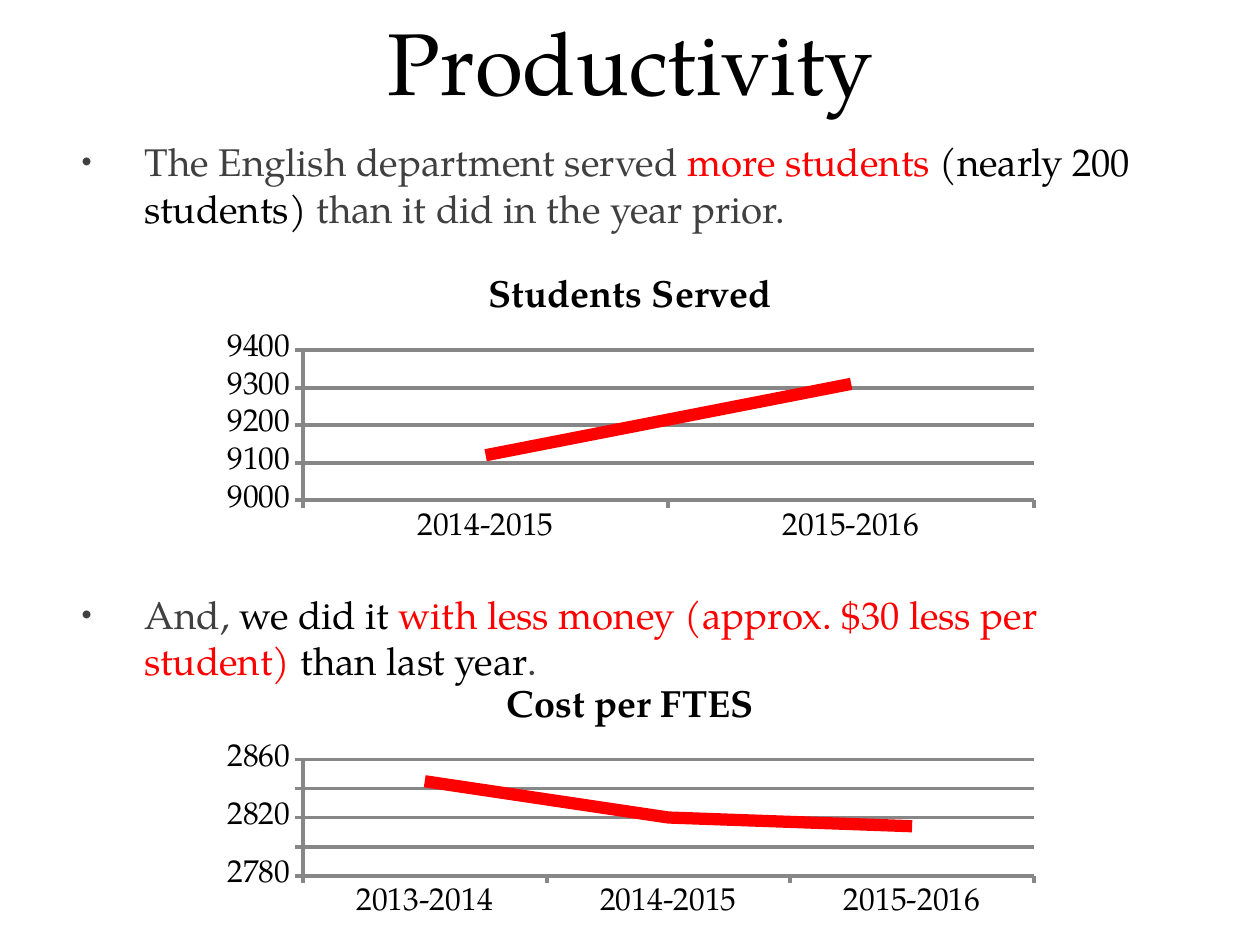
from lxml import etree
from pptx import Presentation
from pptx.chart.data import CategoryChartData
from pptx.dml.color import RGBColor
from pptx.enum.chart import XL_CHART_TYPE, XL_MARKER_STYLE, XL_TICK_MARK
from pptx.enum.text import MSO_ANCHOR, PP_ALIGN
from pptx.oxml import parse_xml
from pptx.oxml.ns import nsdecls, qn
from pptx.util import Inches, Pt

LINE, LINE_STACKED = XL_CHART_TYPE.LINE, XL_CHART_TYPE.LINE_STACKED
NO_MARKER, CROSS = XL_MARKER_STYLE.NONE, XL_TICK_MARK.CROSS
OUTSIDE = XL_TICK_MARK.OUTSIDE
FONT = "TeX Gyre Pagella"
BLACK, GREY, RED, RULE = "000000", "404040", "FF0000", "878787"

# Content
TITLE = "Productivity"
BULLETS = [  # (space before in points, runs)
    (0, [("The English department served ", GREY), ("more students ", RED),
         ("(nearly 200 students) ", BLACK),
         ("than it did in the year prior.", GREY)]),
    (206, [("And, ", GREY), ("we did it ", BLACK),
           ("with less money (approx. $30 less per student) ", RED),
           ("than last year", BLACK), (".", GREY)]),
]
CHARTS = [
    dict(name="Students Served", kind=LINE_STACKED, top=2.03, height=2.34,
         cats=["2014-2015", "2015-2016"], vals=[9120, 9310],
         scale=(9000, 9400, 100), plot=(0.11, 0.32, 0.87, 0.51)),
    dict(name="Cost per FTES", kind=LINE, top=5.29, height=2.05,
         cats=["2013-2014", "2014-2015", "2015-2016"], vals=[2845, 2820, 2814],
         scale=(2780, 2860, 20), plot=(0.11, 0.36, 0.87, 0.45)),
]


def rgb(color):
    return RGBColor.from_string(color)


def style(font, size, color, bold=False):
    font.name, font.size, font.bold = FONT, Pt(size), bold
    font.color.rgb = rgb(color)


def add_run(p, text, size, color, bold=False):
    r = p.add_run()
    r.text = text
    style(r.font, size, color, bold)


def add_box(s, top, height, anchor):
    tf = s.shapes.add_textbox(Inches(0.55), Inches(top), Inches(8.91),
                              Inches(height)).text_frame
    tf.word_wrap, tf.vertical_anchor = True, anchor
    return tf


def add_bullet(p):
    pPr = p._p.get_or_add_pPr()
    pPr.set("marL", str(Inches(0.5)))
    pPr.set("indent", str(Inches(-0.5)))
    color = etree.SubElement(pPr, qn("a:buClr"))
    etree.SubElement(color, qn("a:srgbClr"), val=GREY)
    etree.SubElement(pPr, qn("a:buSzPct"), val="75000")
    etree.SubElement(pPr, qn("a:buFont"), typeface="Arial")
    etree.SubElement(pPr, qn("a:buChar"), char="•")


def set_plot_area(chart, plot):
    area = chart._chartSpace.chart.plotArea
    for old in area.findall(qn("c:layout")):
        area.remove(old)
    parts = "".join(f'<c:{tag} val="{v}"/>' for tag, v in zip("xywh", plot))
    area.insert(0, parse_xml(
        f'<c:layout {nsdecls("c")}><c:manualLayout><c:layoutTarget val="inner"/>'
        f'<c:xMode val="edge"/><c:yMode val="edge"/>{parts}'
        '</c:manualLayout></c:layout>'))


def rule(line):
    line.color.rgb, line.width = rgb(RULE), Pt(2.25)


def add_line_chart(s, name, kind, top, height, cats, vals, scale, plot):
    data = CategoryChartData()
    data.categories = cats
    data.add_series(name, vals)
    chart = s.shapes.add_chart(kind, Inches(1.67), Inches(top), Inches(6.67),
                               Inches(height), data).chart
    style(chart.font, 18, BLACK)
    chart.has_legend = False
    chart.has_title = True
    add_run(chart.chart_title.text_frame.paragraphs[0], name, 21.6, BLACK, True)
    chart.chart_title.include_in_layout = False
    set_plot_area(chart, plot)

    for axis in (chart.category_axis, chart.value_axis):
        axis.major_tick_mark = OUTSIDE
        rule(axis.format.line)
    axis = chart.value_axis
    axis.minimum_scale, axis.maximum_scale, axis.major_unit = scale
    axis.has_major_gridlines = True
    rule(axis.major_gridlines.format.line)

    chart.plots[0].vary_by_categories = False
    series = chart.plots[0].series[0]
    series.smooth = False
    series.marker.style = NO_MARKER
    series.format.line.color.rgb = rgb(RED)
    series.format.line.width = Pt(7)


prs = Presentation()
prs.slide_width, prs.slide_height = Inches(10), Inches(7.5)
s = prs.slides.add_slide(prs.slide_layouts[6])

# Title
p = add_box(s, 0.1, 0.85, MSO_ANCHOR.BOTTOM).paragraphs[0]
p.alignment = PP_ALIGN.CENTER
add_run(p, TITLE, 50, BLACK)

# Bullets, with room for the first chart between them
tf = add_box(s, 1.05, 5.07, MSO_ANCHOR.TOP)
for i, (gap, runs) in enumerate(BULLETS):
    p = tf.add_paragraph() if i else tf.paragraphs[0]
    add_bullet(p)
    p.space_before = Pt(gap)
    for text, color in runs:
        add_run(p, text, 22, color)

# Charts
for spec_values in CHARTS:
    add_line_chart(s, **spec_values)

prs.save("out.pptx")
